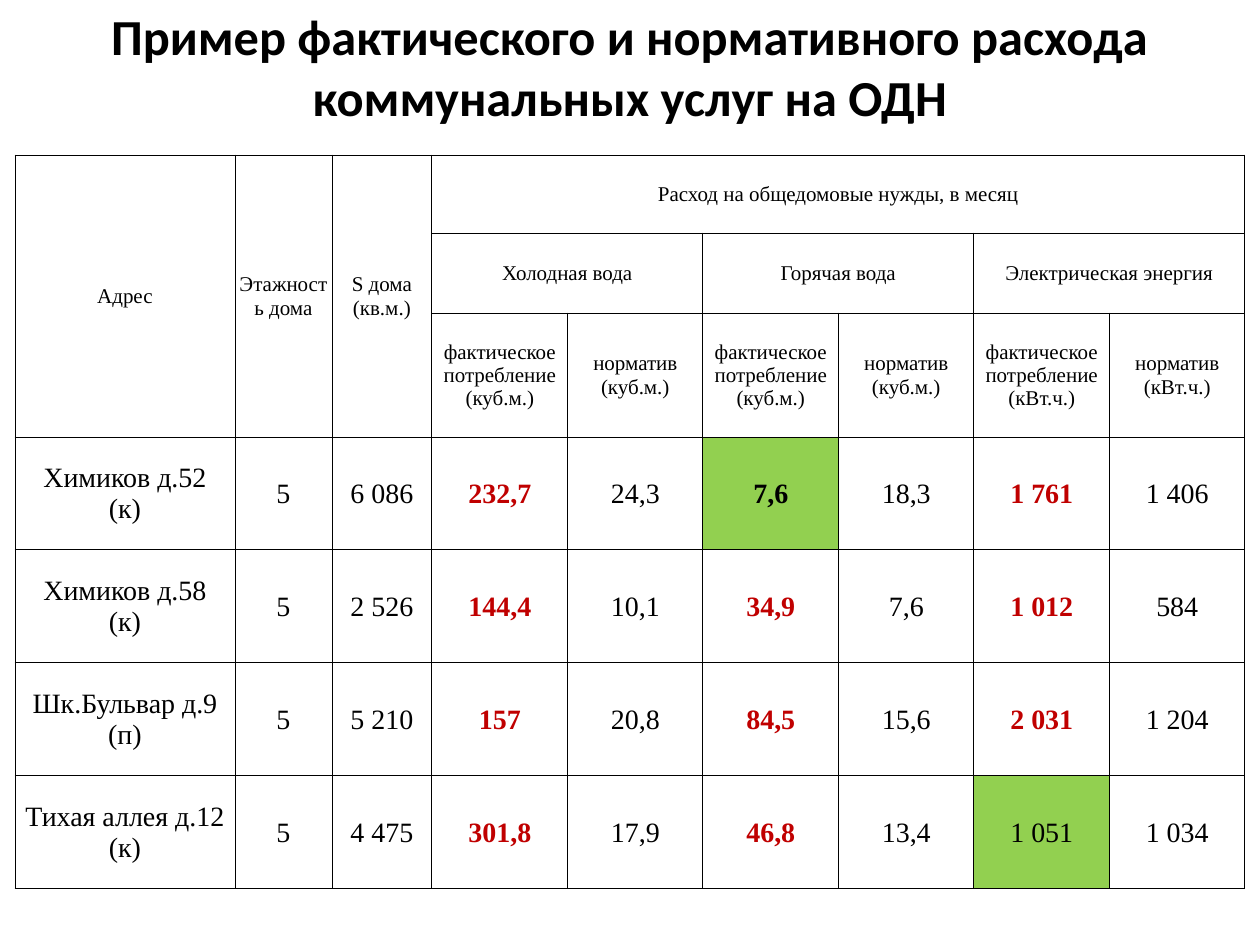
"""Build a slide comparing actual and standard utility use in shared areas."""
from lxml import etree
from pptx import Presentation
from pptx import util as u
from pptx.dml.color import RGBColor
from pptx.enum import text
from pptx.oxml.ns import qn

PX = u.Inches(1) / 126
BLACK, RED, GREEN, WHITE = "000000", "C00000", "92D050", "FFFFFF"
TITLE = "Пример фактического и нормативного расхода коммунальных услуг на ОДН"
COLUMN_WIDTHS = [220, 97, 100] + [136, 135] * 3
ROW_HEIGHTS = [78, 80, 124] + [113] * 4
FIRST_DATA_ROW = 3
ACTUAL_COLUMNS = (3, 5, 7)
SIDE_HEADINGS = ["Адрес", "Этажность дома", "S дома (кв.м.)"]
RESOURCES = [
    ("Холодная вода", "куб.м."),
    ("Горячая вода", "куб.м."),
    ("Электрическая энергия", "кВт.ч."),
]
HOUSES = [
    ["Химиков д.52\n(к)", "5", "6 086", "232,7", "24,3", "7,6", "18,3", "1 761", "1 406"],
    ["Химиков д.58\n(к)", "5", "2 526", "144,4", "10,1", "34,9", "7,6", "1 012", "584"],
    ["Шк.Бульвар д.9\n(п)", "5", "5 210", "157", "20,8", "84,5", "15,6", "2 031", "1 204"],
    ["Тихая аллея д.12\n(к)", "5", "4 475", "301,8", "17,9", "46,8", "13,4", "1 051", "1 034"],
]
HIGHLIGHTS = {(3, 5): {"bold": True}, (6, 7): {"bold": False}}


def px(length):
    """Turn pixels into EMU."""
    return u.Emu(round(length * PX))


def color(value):
    """Turn a hex string into a colour."""
    return RGBColor.from_string(value)


def apply(target, values):
    """Set attributes of an object from a dict."""
    for name, value in values.items():
        setattr(target, name, value)


def write(frame, content, size, font_name, ink=BLACK, bold=False):
    """Fill a text frame with centred paragraphs in one format."""
    frame.text = content
    for paragraph in frame.paragraphs:
        paragraph.alignment = text.PP_ALIGN.CENTER
        for run in paragraph.runs:
            apply(run.font, {"size": u.Pt(size), "name": font_name, "bold": bold})
            run.font.color.rgb = color(ink)


def add_borders(cell):
    """Draw a thin black line on each side of a cell."""
    properties = cell._tc.get_or_add_tcPr()
    for side in ("a:lnL", "a:lnR", "a:lnT", "a:lnB"):
        line = etree.SubElement(properties, qn(side), w=str(u.Pt(0.5)))
        fill = etree.SubElement(line, qn("a:solidFill"))
        etree.SubElement(fill, qn("a:srgbClr"), val=BLACK)


def format_cell(cell, fill):
    """Give a cell its borders, fill, margins and anchor."""
    add_borders(cell)
    cell.fill.solid()
    cell.fill.fore_color.rgb = color(fill)
    margins = dict.fromkeys(("margin_left", "margin_right", "margin_top"), px(1))
    apply(cell, {**margins, "margin_bottom": 0,
                 "vertical_anchor": text.MSO_ANCHOR.MIDDLE})


def add_title(slide, left, top, width, height):
    """Place the slide title in its box."""
    title = slide.shapes.title
    apply(title, {"left": px(left), "top": px(top),
                  "width": px(width), "height": px(height)})
    apply(title.text_frame, {"word_wrap": True, "auto_size": text.MSO_AUTO_SIZE.NONE,
                             "vertical_anchor": text.MSO_ANCHOR.MIDDLE})
    write(title.text_frame, TITLE, 28.8, "Calibri", bold=True)


def write_headings(table):
    """Merge and fill the three heading rows."""
    def put(row, column, content, last_row, last_column):
        cell = table.cell(row, column)
        if (row, column) != (last_row, last_column):
            cell.merge(table.cell(last_row, last_column))
        write(cell.text_frame, content, 12, "Times New Roman")

    for column, heading in enumerate(SIDE_HEADINGS):
        put(0, column, heading, 2, column)
    put(0, 3, "Расход на общедомовые нужды, в месяц", 0, 8)
    for column, (resource, unit) in zip(ACTUAL_COLUMNS, RESOURCES):
        put(1, column, resource, 1, column + 1)
        put(2, column, f"фактическое потребление ({unit})", 2, column)
        put(2, column + 1, f"норматив ({unit})", 2, column + 1)


def write_houses(table):
    """Fill the data rows, with overspending in bold red."""
    for row, house in enumerate(HOUSES, FIRST_DATA_ROW):
        for column, value in enumerate(house):
            style = {"ink": RED, "bold": True} if column in ACTUAL_COLUMNS else {}
            style = HIGHLIGHTS.get((row, column), style)
            write(table.cell(row, column).text_frame, value, 16,
                  "Times New Roman", **style)


def add_usage_table(slide, left, top):
    """Place the usage table with its corner at the given point."""
    frame = slide.shapes.add_table(
        len(ROW_HEIGHTS), len(COLUMN_WIDTHS), px(left), px(top),
        px(sum(COLUMN_WIDTHS)), px(sum(ROW_HEIGHTS)))
    table = frame.table
    apply(table, {"first_row": False, "horz_banding": False})
    for column, width in zip(table.columns, COLUMN_WIDTHS):
        column.width = px(width)
    for row, height in zip(table.rows, ROW_HEIGHTS):
        row.height = px(height)
    for row in range(len(ROW_HEIGHTS)):
        for column in range(len(COLUMN_WIDTHS)):
            fill = GREEN if (row, column) in HIGHLIGHTS else WHITE
            format_cell(table.cell(row, column), fill)
    write_headings(table)
    write_houses(table)


def main():
    """Build and save the presentation."""
    presentation = Presentation()
    apply(presentation, {"slide_width": px(1260), "slide_height": px(945)})
    slide = presentation.slides.add_slide(presentation.slide_layouts[5])
    add_title(slide, 15, 16, 1230, 100)
    add_usage_table(slide, 15, 155)
    presentation.save("out.pptx")


if __name__ == "__main__":
    main()
